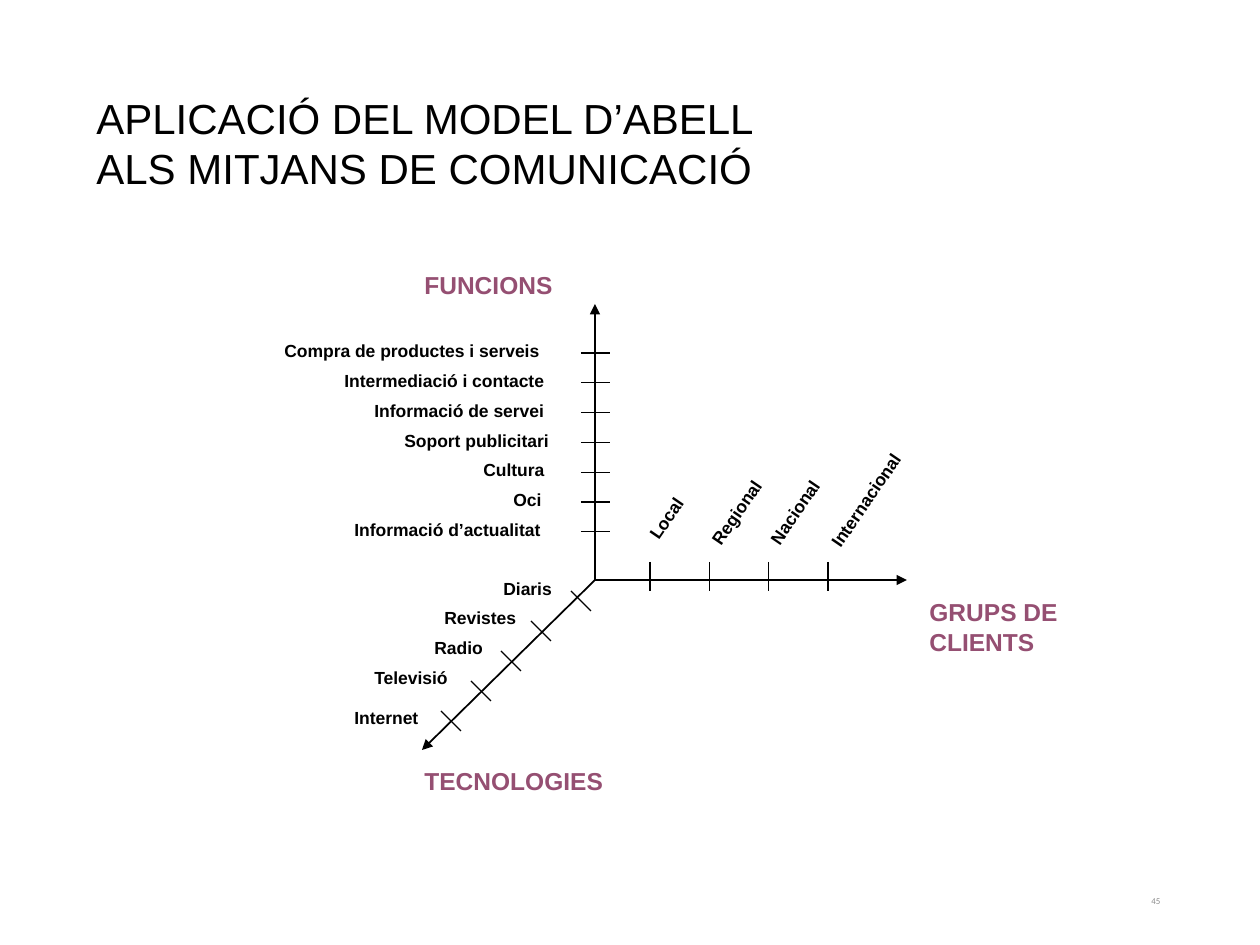
from pptx import Presentation, util as u
from pptx.dml.color import RGBColor
from pptx.enum import shapes, text
from pptx.oxml.ns import qn
from lxml import etree

PX = 914400 / 126
HUE = {"ink": "000000", "plum": "954F72", "grey": "8C8C8C"}

# Content: words, left, top, width, height
TITLE = ["APLICACIÓ DEL MODEL D’ABELL", "ALS MITJANS DE COMUNICACIÓ"]
HEADS = [
    (["TECNOLOGIES"], 412, 760, 485, 42),
    (["GRUPS DE", "CLIENTS"], 917, 591, 154, 72),
    (["FUNCIONS"], 412, 264, 154, 42),
]
# Words, left, width
ROLES = [
    ("Compra de productes i serveis", 272, 282),
    ("Intermediació i contacte", 332, 228),
    ("Informació de servei", 362, 197),
    ("Soport publicitari", 392, 172),
    ("Cultura", 471, 89),
    ("Oci", 501, 55),
    ("Informació d’actualitat", 342, 214),
]
# Words, left, top, width
GROUPS = [
    ("Local", 631, 501, 71),
    ("Regional", 687, 495, 100),
    ("Nacional", 746, 495, 98),
    ("Internacional", 799, 483, 134),
]
# Words, left, top, width, tick left, tick top
TECHS = [
    ("Diaris", 491, 572, 75, 571, 591),
    ("Revistes", 432, 601, 98, 531, 621),
    ("Radio", 422, 631, 75, 501, 651),
    ("Televisió", 362, 661, 101, 471, 681),
    ("Internet", 342, 701, 91, 441, 711),
]
ROOT = (595, 580)
TIPS = [(595, 304), (907, 580), (422, 750)]
ROW, COL = 29.8, 59.3  # steps between ticks
HIGH = 34  # label height


def px(n):
    return u.Emu(round(n * PX))


def line(home, start, end, width=0.75, arrow=False):
    bar = home.add_connector(shapes.MSO_CONNECTOR.STRAIGHT,
                             *map(px, (*start, *end)))
    bar.line.color.rgb = RGBColor.from_string(HUE["ink"])
    bar.line.width = u.Pt(width)
    if arrow:
        tip = etree.SubElement(bar.line._get_or_add_ln(), qn("a:tailEnd"))
        tip.set("type", "triangle")
    etree.SubElement(bar._element.spPr, qn("a:effectLst"))


def label(home, rows, box, size, hue="ink", bold=True, turn=0, wrap=False,
          font="Arial", align=text.PP_ALIGN.LEFT):
    item = home.add_textbox(*map(px, box))
    item.rotation = turn
    frame = item.text_frame
    frame.word_wrap = wrap
    frame.auto_size = text.MSO_AUTO_SIZE.SHAPE_TO_FIT_TEXT
    for i, words in enumerate(rows):
        para = frame.add_paragraph() if i else frame.paragraphs[0]
        para.alignment = align
        run = para.add_run()
        run.text = words
        run.font.name = font
        run.font.size = u.Pt(size)
        run.font.bold = bold
        run.font.color.rgb = RGBColor.from_string(HUE[hue])
    return frame


def main():
    deck = Presentation()
    deck.slide_width, deck.slide_height = u.Inches(10), u.Inches(7.5)
    page = deck.slides.add_slide(deck.slide_layouts[6]).shapes

    # Page number and title
    foot = label(page, ["45"], (890, 876, 283, 50), 5.1, "grey", False,
                 wrap=True, font="Calibri", align=text.PP_ALIGN.RIGHT)
    foot.auto_size = text.MSO_AUTO_SIZE.NONE
    foot.vertical_anchor = text.MSO_ANCHOR.MIDDLE
    label(page, TITLE, (84, 86, 1052, 113), 24, bold=False, wrap=True)

    # Three axes from one root
    axes = page.add_group_shape().shapes
    for tip in TIPS:
        line(axes, ROOT, tip, 1, True)

    # Functions, up the vertical axis
    for i, (words, left, width) in enumerate(ROLES):
        y = 353 + i * ROW
        line(page, (581, y), (610, y))
        label(page, [words], (left, y - 19, width, HIGH), 10)

    # Client groups, along the horizontal axis
    for i, (words, left, top, width) in enumerate(GROUPS):
        x = 650 + i * COL
        line(page, (x, 562), (x, 591))
        label(page, [words], (left, top, width, HIGH), 10, turn=304.4)

    # Technologies, down the slanted axis
    for words, left, top, width, x, y in TECHS:
        line(page, (x, y), (x + 20, y + 20))
        label(page, [words], (left, top, width, HIGH), 10)

    # Axis names
    for rows, *box in HEADS:
        label(page, rows, box, 14, "plum", wrap=len(rows[0]) > 10)

    deck.save("out.pptx")


if __name__ == "__main__":
    main()
